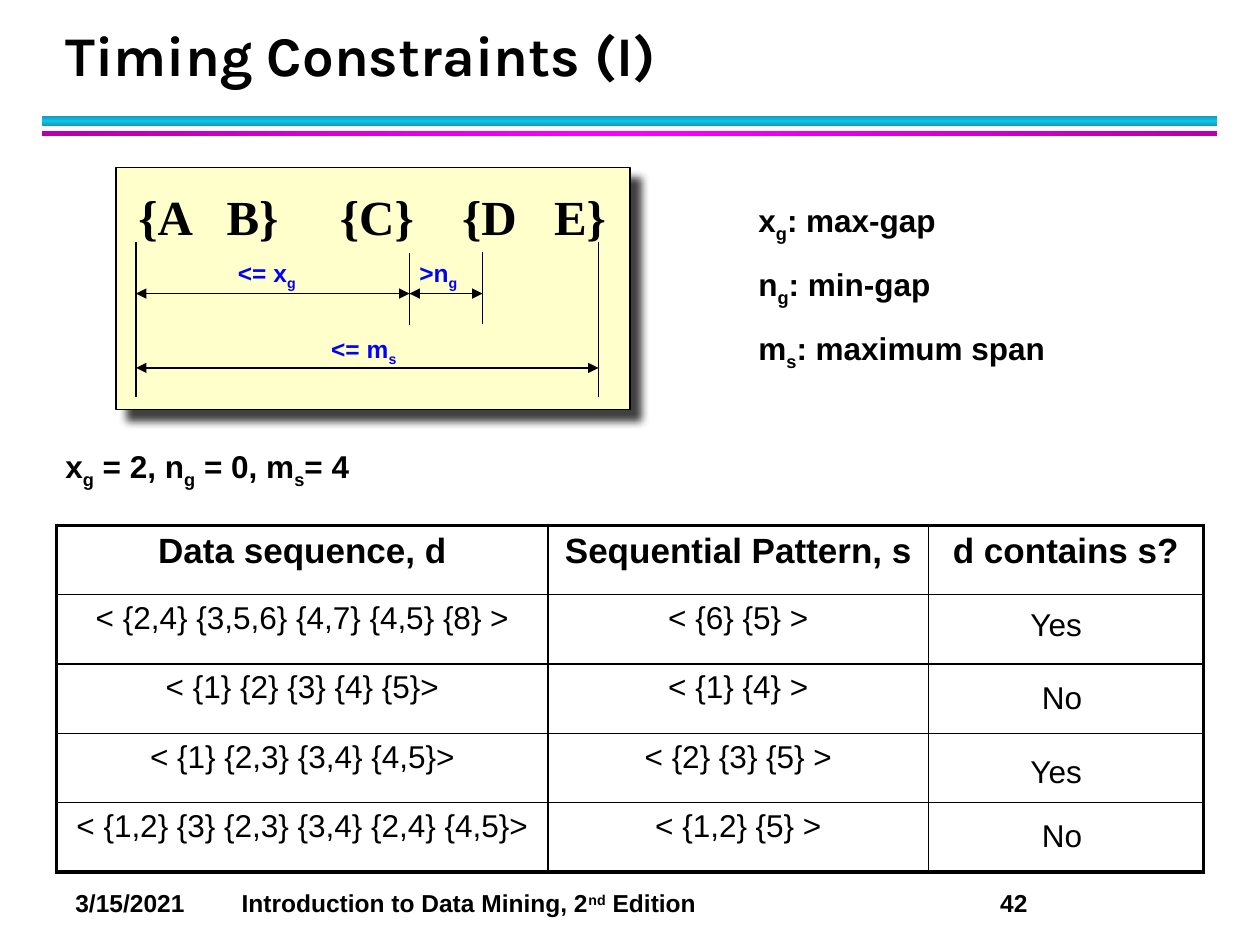
from copy import deepcopy

from lxml import etree
from pptx import Presentation
from pptx.dml.color import RGBColor
from pptx.enum.shapes import MSO_CONNECTOR, MSO_SHAPE
from pptx.enum.text import MSO_ANCHOR, MSO_AUTO_SIZE, PP_ALIGN
from pptx.oxml.ns import qn
from pptx.util import Inches, Pt

LINE = MSO_CONNECTOR.STRAIGHT
RECT = MSO_SHAPE.RECTANGLE
BOTTOM = MSO_ANCHOR.BOTTOM
FIXED = MSO_AUTO_SIZE.NONE
LEFT, CENTER = PP_ALIGN.LEFT, PP_ALIGN.CENTER

BLACK = RGBColor(0x00, 0x00, 0x00)
BLUE = RGBColor(0x00, 0x00, 0xFF)
CREAM = RGBColor(0xFF, 0xFF, 0xCC)
TEAL = RGBColor(0x0E, 0x9B, 0xBA)
AQUA = RGBColor(0x12, 0xC2, 0xE9)
PLUM = RGBColor(0xB2, 0x00, 0xB2)
PINK = RGBColor(0xFF, 0x00, 0xFF)

TITLE = {"name": "Karla", "size": Pt(32), "bold": True}
SETS = {"name": "Times New Roman", "size": Pt(28), "bold": True}
HEAD = {"name": "Arial", "size": Pt(20), "bold": True}
BODY = {"name": "Arial", "size": Pt(18), "bold": False}
TERM = {**BODY, "bold": True}
SMALL = {**TERM, "size": Pt(14)}
PLAIN = {"space_before": Pt(2)}
LIST = {"space_before": Pt(2), "space_after": Pt(10)}
CELL = {"alignment": CENTER, "space_before": Pt(1), "space_after": Pt(4)}

ROWS = [
    ("Data sequence, d", "Sequential Pattern, s", "d contains s?"),
    ("< {2,4} {3,5,6} {4,7} {4,5} {8} >", "< {6} {5} >", ""),
    ("< {1} {2} {3} {4} {5}>", "< {1} {4} >", ""),
    ("< {1} {2,3} {3,4} {4,5}>", "< {2} {3} {5} >", ""),
    ("< {1,2} {3} {2,3} {3,4} {2,4} {4,5}>", "< {1,2} {5} >", ""),
]


def style(item, vals):
    """Set each attribute named in vals."""
    for name, val in vals.items():
        setattr(item, name, val)


def inches(*nums):
    """Turn plain numbers into lengths."""
    return [Inches(num) for num in nums]


def write(par, text, font, form, color=BLACK, shift=-25):
    """Fill a paragraph, raising or lowering the parts between bars."""
    style(par, form)
    for i, part in enumerate(text.split("|")):
        run = par.add_run()
        run.text = part
        style(run.font, font)
        run.font.color.rgb = color
        if i % 2:
            run._r.get_or_add_rPr().set("baseline", str(shift * 1000))


def add_text(slide, place, lines, font, form, fill=None, wrap=True, **look):
    """Add a text box with one paragraph for each line."""
    box = slide.shapes.add_textbox(*inches(*place))
    if fill is not None:
        box.fill.solid()
        box.fill.fore_color.rgb = fill
    frame = box.text_frame
    frame.word_wrap = wrap
    for i, text in enumerate(lines):
        par = frame.add_paragraph() if i else frame.paragraphs[0]
        write(par, text, font, form, **look)
    return box


def set_tabs(box, stops):
    """Give the first paragraph of a box its tab stops."""
    props = box.text_frame.paragraphs[0]._p.get_or_add_pPr()
    tabs = etree.SubElement(props, qn("a:tabLst"))
    for stop in stops:
        etree.SubElement(tabs, qn("a:tab"), pos=str(Inches(stop)), algn="l")


def add_bar(slide, place, edge, mid, angle):
    """Add a bar whose colour runs from edge to mid and back."""
    bar = slide.shapes.add_shape(RECT, *inches(*place))
    bar.shadow.inherit = False
    bar.line.fill.background()
    bar.fill.gradient()
    bar.fill.gradient_angle = angle
    stops = bar._element.spPr.find(".//" + qn("a:gsLst"))
    stops.append(deepcopy(stops[-1]))
    for i, (stop, color) in enumerate(zip(bar.fill.gradient_stops, (edge, mid, edge))):
        stop.position = i / 2
        stop.color.rgb = color


def add_panel(slide, place):
    """Add the cream panel with a soft shadow."""
    panel = slide.shapes.add_shape(RECT, *inches(*place))
    panel.shadow.inherit = False
    panel.fill.solid()
    panel.fill.fore_color.rgb = CREAM
    panel.line.color.rgb = BLACK
    panel.line.width = Pt(0.75)
    shade = etree.SubElement(
        panel._element.spPr.find(qn("a:effectLst")), qn("a:outerShdw"),
        blurRad=str(Pt(5)), dist=str(Pt(8.5)), dir=str(45 * 60000),
        algn="tl", rotWithShape="0")
    color = etree.SubElement(shade, qn("a:srgbClr"), val=str(BLACK))
    etree.SubElement(color, qn("a:alpha"), val="75000")


def add_line(slide, ends, heads=False):
    """Add a thin line, with arrowheads at both ends if asked."""
    line = slide.shapes.add_connector(LINE, *inches(*ends))
    line.line.color.rgb = BLACK
    line.line.width = Pt(0.75)
    if heads:
        for tag in ("a:headEnd", "a:tailEnd"):
            etree.SubElement(line.line._get_or_add_ln(), qn(tag), type="triangle")
    etree.SubElement(line._element.spPr, qn("a:effectLst"))


def add_edges(cell, widths):
    """Draw the left, right, top and bottom edges of a cell."""
    props = cell._tc.get_or_add_tcPr()
    for i, (side, width) in enumerate(zip("LRTB", widths)):
        edge = etree.Element(qn("a:ln" + side), w=str(Pt(width)))
        fill = etree.SubElement(edge, qn("a:solidFill"))
        etree.SubElement(fill, qn("a:srgbClr"), val=str(BLACK))
        props.insert(i, edge)


def add_grid(slide, place, cols):
    """Add the table with a heavy frame and thin inner lines."""
    last, end = len(ROWS) - 1, len(cols) - 1
    grid = slide.shapes.add_table(last + 1, end + 1, *inches(*place)).table
    style(grid, {"first_row": False, "horz_banding": False})
    for col, width in zip(grid.columns, inches(*cols)):
        col.width = width
    for r, row in enumerate(ROWS):
        for c, text in enumerate(row):
            cell = grid.cell(r, c)
            cell.fill.background()
            if text:
                write(cell.text_frame.paragraphs[0], text, BODY if r else HEAD, CELL)
            outer = (c == 0, c == end, r == 0, r == last)
            add_edges(cell, [2.25 if out else 1 for out in outer])


def add_title(slide, place, text):
    """Move and fill the title placeholder."""
    title = slide.shapes.title
    style(title, dict(zip(("left", "top", "width", "height"), inches(*place))))
    style(title.text_frame, {"vertical_anchor": BOTTOM, "auto_size": FIXED})
    form = {"alignment": LEFT, "line_spacing": Pt(36)}
    write(title.text_frame.paragraphs[0], text, TITLE, form)


def main():
    """Build the slide and save it."""
    deck = Presentation()
    style(deck, {"slide_width": Inches(10), "slide_height": Inches(7.5)})
    slide = deck.slides.add_slide(deck.slide_layouts[5])
    add_bar(slide, (0.33, 0.92, 9.33, 0.08), TEAL, AQUA, 90)
    add_bar(slide, (0.33, 1.04, 9.33, 0.04), PLUM, PINK, 0)
    foot = "3/15/2021\tIntroduction to Data Mining, 2|nd| Edition\t42"
    box = add_text(slide, (0.5, 7, 9.33, 0.34), [foot], SMALL, PLAIN, shift=30)
    set_tabs(box, (1.32, 7.34))
    add_title(slide, (0.42, 0.17, 9.06, 0.58), "Timing Constraints (I)")

    add_panel(slide, (0.92, 1.33, 4.08, 1.92))
    sets = "{A\tB}\t{C}\t{D\tE}"
    box = add_text(slide, (1, 1.43, 3.96, 0.57), [sets], SETS, {}, CREAM)
    set_tabs(box, (0.7, 1.6, 2.57, 3.3))
    for left, top, width, text in ((2.53, 2.6, 0.72, "<= m|s"),
                                   (1.79, 2, 0.66, "<= x|g"),
                                   (3.23, 2, 0.56, ">n|g")):
        add_text(slide, (left, top, width, 0.33), [text], SMALL, {}, CREAM,
                 wrap=False, color=BLUE)
    for start, end, y in ((1.08, 4.75, 2.92), (1.08, 3.25, 2.33), (3.25, 3.83, 2.33)):
        add_line(slide, (start, y, end, y), heads=True)
    for x, top, low in ((1.08, 1.92, 3.15), (4.75, 1.92, 3.15),
                        (3.25, 2.01, 2.58), (3.83, 2, 2.57)):
        add_line(slide, (x, top, x, low))

    terms = ["x|g|: max-gap", "n|g|: min-gap", "m|s|: maximum span"]
    add_text(slide, (5.92, 1.55, 3.42, 1.36), terms, TERM, LIST)
    add_text(slide, (0.42, 3.5, 8.58, 0.4), ["x|g| = 2, n|g| = 0, m|s|= 4"], TERM, LIST)
    add_grid(slide, (0.45, 4.17, 9.1, 2.75), (3.9, 3.02, 2.18))
    for left, top, width, text in ((8.08, 4.75, 0.83, "Yes"), (8.17, 5.33, 0.58, "No"),
                                   (8.08, 5.92, 0.83, "Yes"), (8.17, 6.43, 0.58, "No")):
        add_text(slide, (left, top, width, 0.4), [text], BODY, PLAIN)
    deck.save("out.pptx")


if __name__ == "__main__":
    main()
